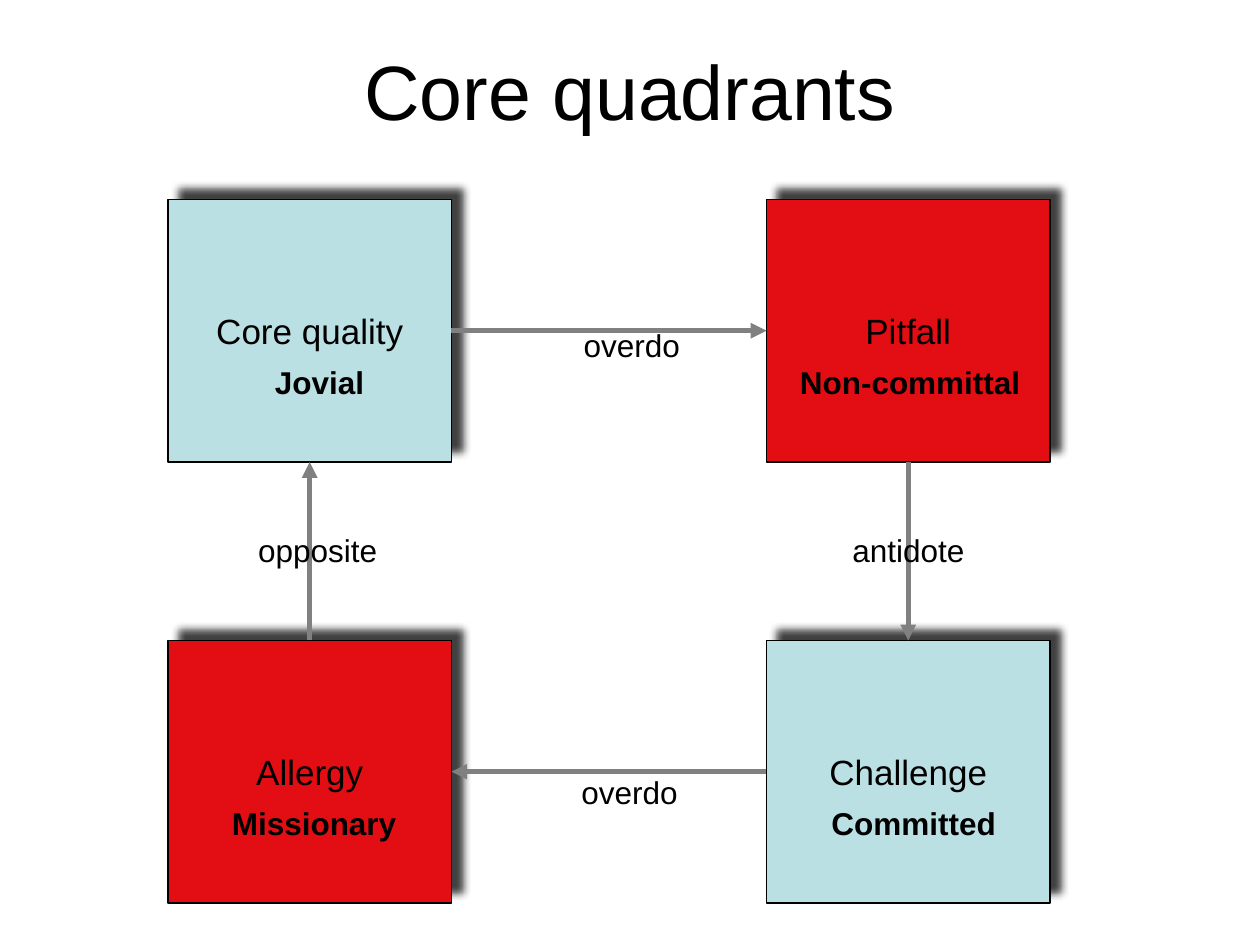
from lxml.etree import SubElement
from pptx import Presentation
from pptx.dml.color import RGBColor
from pptx.enum.shapes import MSO_CONNECTOR as Connector, MSO_SHAPE as Shape
from pptx.enum.text import MSO_ANCHOR as Anchor, MSO_AUTO_SIZE as AutoSize, PP_ALIGN as Align
from pptx.oxml.ns import qn
from pptx.util import Emu, Pt

EMU_PER_PX = 7620
COLORS = {"text": "000000", "positive": "BBE0E3", "negative": "E30E13", "arrow": "808080"}
LEFT, RIGHT = 160, 730
TOP, BOTTOM = 190, 610
BOX_WIDTH, BOX_HEIGHT = 270, 250
MIDDLE_X, MIDDLE_Y = BOX_WIDTH // 2, BOX_HEIGHT // 2
LABEL_HEIGHT = 48


def px(*lengths):
    return [Emu(length * EMU_PER_PX) for length in lengths]


def color(name):
    return RGBColor.from_string(COLORS[name])


class QuadrantSlide:
    font_name = "Arial"

    def __init__(self, presentation):
        self.slide = presentation.slides.add_slide(presentation.slide_layouts[5])

    def set_text(self, frame, text, size, align=Align.LEFT, bold=False):
        paragraph = frame.paragraphs[0]
        paragraph.text = text
        paragraph.alignment = align
        font = paragraph.font
        font.name, font.size, font.bold = self.font_name, Pt(size), bold
        font.color.rgb = color("text")

    def title(self, text, left, top, width, height):
        shape = self.slide.shapes.title
        shape.left, shape.top, shape.width, shape.height = px(left, top, width, height)
        shape.text_frame.vertical_anchor = Anchor.MIDDLE
        self.set_text(shape.text_frame, text, 44, Align.CENTER)

    def box(self, text, left, top, fill):
        shape = self.slide.shapes.add_shape(
            Shape.RECTANGLE, *px(left, top, BOX_WIDTH, BOX_HEIGHT))
        shape.fill.solid()
        shape.fill.fore_color.rgb = color(fill)
        shape.line.color.rgb = color("text")
        shape.line.width = Pt(0.75)
        self.cast_shadow(shape)
        shape.text_frame.word_wrap = False
        shape.text_frame.vertical_anchor = Anchor.MIDDLE
        self.set_text(shape.text_frame, text, 20, Align.CENTER)

    def cast_shadow(self, shape):
        shape.shadow.inherit = False
        effects = shape._element.spPr.find(qn("a:effectLst"))
        shadow = SubElement(effects, qn("a:outerShdw"), blurRad=str(Pt(5)), dist=str(Pt(8.5)),
                            dir=str(315 * 60000), algn="ctr", rotWithShape="0")
        shadow_color = SubElement(shadow, qn("a:srgbClr"), val=COLORS["text"])
        SubElement(shadow_color, qn("a:alpha"), val="75000")

    def label(self, text, left, top, width, bold=False, shapes=None):
        shapes = shapes or self.slide.shapes
        frame = shapes.add_textbox(*px(left, top, width, LABEL_HEIGHT)).text_frame
        frame.word_wrap = False
        frame.auto_size = AutoSize.SHAPE_TO_FIT_TEXT
        self.set_text(frame, text, 18, bold=bold)

    def labelled_arrow(self, start, end, text, left, top, width):
        shapes = self.slide.shapes.add_group_shape().shapes
        connector = shapes.add_connector(Connector.STRAIGHT, *px(*start, *end))
        connector.line.color.rgb = color("arrow")
        connector.line.width = Pt(3)
        properties = connector._element.spPr
        SubElement(properties.find(qn("a:ln")), qn("a:tailEnd"), type="triangle")
        SubElement(properties, qn("a:effectLst"))
        self.label(text, left, top, width, shapes=shapes)


def main():
    presentation = Presentation()
    presentation.slide_width, presentation.slide_height = px(1200, 900)
    quadrants = QuadrantSlide(presentation)
    quadrants.title("Core quadrants", 90, 10, 1020, 150)

    for text, left, top, fill in (
        ("Core quality", LEFT, TOP, "positive"),
        ("Allergy", LEFT, BOTTOM, "negative"),
        ("Challenge", RIGHT, BOTTOM, "positive"),
        ("Pitfall", RIGHT, TOP, "negative"),
    ):
        quadrants.box(text, left, top, fill)

    inner_left, inner_top = LEFT + BOX_WIDTH, TOP + BOX_HEIGHT
    left_x, right_x = LEFT + MIDDLE_X, RIGHT + MIDDLE_X
    top_y, bottom_y = TOP + MIDDLE_Y, BOTTOM + MIDDLE_Y
    for start, end, text, left, top, width in (
        ((inner_left, top_y), (RIGHT, top_y), "overdo", 544, 305, 116),
        ((left_x, BOTTOM), (left_x, inner_top), "opposite", 234, 500, 138),
        ((RIGHT, bottom_y), (inner_left, bottom_y), "overdo", 542, 730, 116),
        ((right_x, inner_top), (right_x, BOTTOM), "antidote", 800, 500, 131),
    ):
        quadrants.labelled_arrow(start, end, text, left, top, width)

    for text, left, top, width in (
        ("Jovial", 250, 340, 109),
        ("Committed", 780, 760, 181),
        ("Non-committal", 750, 340, 234),
        ("Missionary", 209, 760, 181),
    ):
        quadrants.label(text, left, top, width, bold=True)

    presentation.save("out.pptx")


if __name__ == "__main__":
    main()
